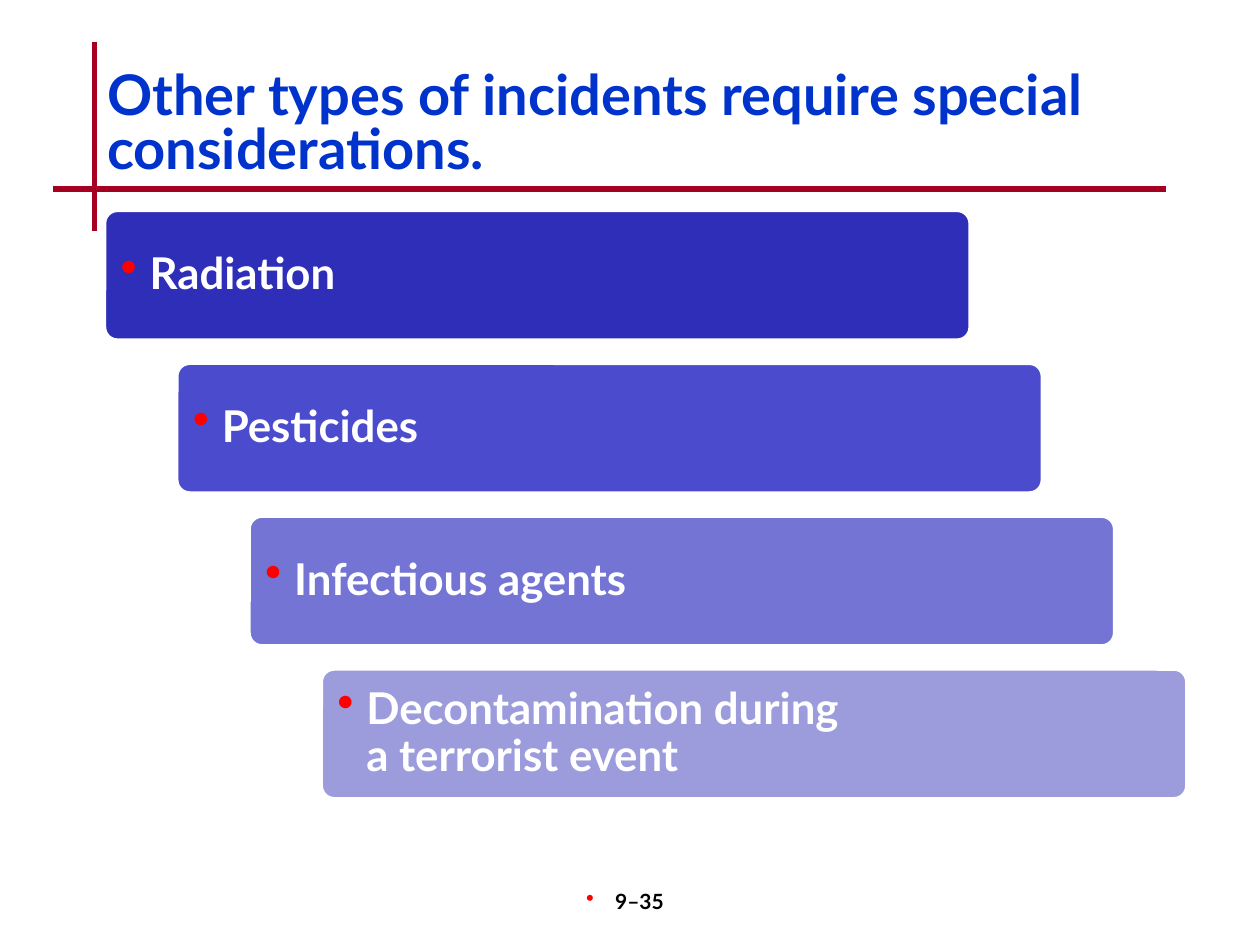
from lxml.etree import SubElement
from pptx import Presentation
from pptx.dml.color import RGBColor
from pptx.enum.shapes import MSO_CONNECTOR as Connector, MSO_SHAPE as Shape
from pptx.enum.text import MSO_ANCHOR as Anchor, MSO_AUTO_SIZE as AutoSize, PP_ALIGN as Align
from pptx.oxml.ns import qn
from pptx.util import Inches, Pt

INCIDENTS = [
    ("Radiation", "2E2EB9"),
    ("Pesticides", "4B4BCD"),
    ("Infectious agents", "7474D4"),
    ("Decontamination during \va terrorist event", "9C9CDD"),
]
STEP_X, STEP_Y = 1.72 / 3, 3.64 / 3


def color(value):
    return RGBColor.from_string(value)


def set_font(para, size, value, bold=True):
    font = para.font
    font.name, font.size, font.bold = "Lato", Pt(size), bold
    font.color.rgb = color(value)


def add_bullet(para, indent):
    props = para._p.get_or_add_pPr()
    props.set("marL", str(Inches(indent)))
    props.set("indent", str(-Inches(indent)))
    fill = SubElement(props, qn("a:buClr"))
    SubElement(fill, qn("a:srgbClr"), val="FF0000")
    SubElement(props, qn("a:buSzPct"), val="110000")
    SubElement(props, qn("a:buChar"), char="•")


def add_rule(page, x1, y1, x2, y2):
    rule = page.shapes.add_connector(
        Connector.STRAIGHT, Inches(x1), Inches(y1), Inches(x2), Inches(y2))
    rule.line.color.rgb = color("A50021")
    rule.line.width = Pt(3)
    SubElement(rule._element.spPr, qn("a:effectLst"))


def add_title(page, text):
    title = page.shapes.title
    title.left, title.top = Inches(0.75), Inches(0.5)
    title.width, title.height = Inches(8.5), Inches(1)
    frame = title.text_frame
    frame.text = text
    frame.auto_size = AutoSize.NONE
    frame.vertical_anchor = Anchor.MIDDLE
    para = frame.paragraphs[0]
    para.alignment = Align.LEFT
    para.line_spacing = 0.8
    set_font(para, 32, "0033CC")


def add_text(page, text, left, top, width, height):
    box = page.shapes.add_textbox(Inches(left), Inches(top), Inches(width), Inches(height))
    frame = box.text_frame
    frame.word_wrap = True
    frame.text = text
    return frame


def add_step(page, text, fill, left, top):
    bar = page.shapes.add_shape(
        Shape.ROUNDED_RECTANGLE, Inches(left), Inches(top), Inches(6.87), Inches(1.03))
    bar.adjustments[0] = 0.1
    bar.shadow.inherit = False
    bar.fill.solid()
    bar.fill.fore_color.rgb = color(fill)
    bar.line.color.rgb = color("FFFFFF")
    bar.line.width = Pt(2)

    frame = add_text(page, text, left + 0.03, top + 0.03, 5.57, 0.97)
    frame.vertical_anchor = Anchor.MIDDLE
    frame.margin_left = frame.margin_right = Inches(0.1)
    frame.margin_top = frame.margin_bottom = Inches(0.1)
    para = frame.paragraphs[0]
    para.line_spacing = 0.9
    add_bullet(para, 0.23)
    set_font(para, 25, "FFFFFF")


def add_page_number(page, text):
    para = add_text(page, text, 3.92, 7, 2.08, 0.5).paragraphs[0]
    para.alignment = Align.CENTER
    add_bullet(para, 0.23)
    set_font(para, 12, "000000")


def main():
    deck = Presentation()
    deck.slide_width, deck.slide_height = Inches(10), Inches(7.5)
    page = deck.slides.add_slide(deck.slide_layouts[5])
    add_rule(page, 0.75, 0.33, 0.75, 1.83)
    add_rule(page, 0.42, 1.5, 9.25, 1.5)
    for index, (text, fill) in enumerate(INCIDENTS):
        add_step(page, text, fill, 0.83 + index * STEP_X, 1.67 + index * STEP_Y)
    add_title(page, "Other types of incidents require special considerations.")
    add_page_number(page, "9–35")
    deck.save("out.pptx")


if __name__ == "__main__":
    main()
